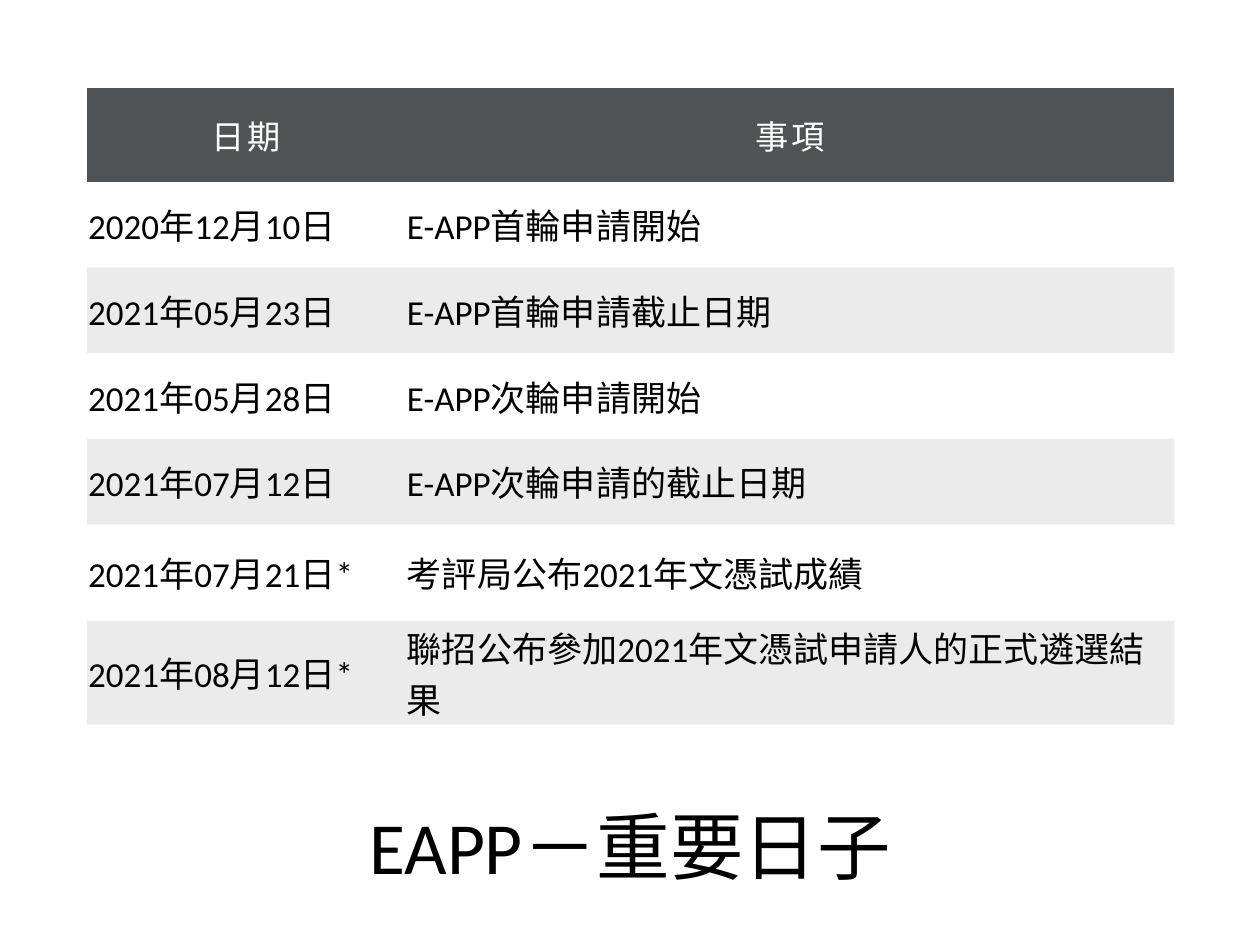
from lxml.etree import SubElement
from pptx import Presentation
from pptx.dml.color import RGBColor
from pptx.enum.text import MSO_ANCHOR, PP_ALIGN
from pptx.oxml.ns import qn
from pptx.util import Inches, Pt

# Content
TITLE = "EAPP－重要日子"
ROWS = [
    ("日期", "事項"),
    ("2020年12月10日", "E-APP首輪申請開始"),
    ("2021年05月23日", "E-APP首輪申請截止日期"),
    ("2021年05月28日", "E-APP次輪申請開始"),
    ("2021年07月12日", "E-APP次輪申請的截止日期"),
    ("2021年07月21日*", "考評局公布2021年文憑試成績"),
    ("2021年08月12日*", "聯招公布參加2021年文憑試申請人的正式遴選結果"),
]
LEFT, WIDTH = 0.69, 8.62
COLUMN_WIDTHS = (2.53, 6.1)
HEADER_HEIGHT, ROW_HEIGHT = 0.74, 0.68
NO_STYLE = "{2D5ABB26-0587-4C30-8999-92F81FD0307C}"


def set_fill(fill, color, alpha=None):
    fill.solid()
    fill.fore_color.rgb = RGBColor.from_string(color)
    if alpha is not None:
        color_element = fill._xPr.find(qn("a:solidFill"))[0]
        SubElement(color_element, qn("a:alpha"), val=str(alpha * 1000))


def write(frame, text, size, color="000000", align=PP_ALIGN.LEFT,
          line_spacing=None, letter_spacing=0):
    frame.word_wrap = True
    paragraph = frame.paragraphs[0]
    paragraph.alignment = align
    if line_spacing:
        paragraph.line_spacing = line_spacing
    run = paragraph.add_run()
    run.text = text
    run.font.name = "Calibri"
    run.font.size = Pt(size)
    run.font.bold = False
    run.font.color.rgb = RGBColor.from_string(color)
    if letter_spacing:
        run.font._element.set("spc", str(int(letter_spacing * 100)))


presentation = Presentation()
presentation.slide_width, presentation.slide_height = Inches(10), Inches(7.5)
slide = presentation.slides.add_slide(presentation.slide_layouts[5])

# Title below the table
title = slide.shapes.title
title.left, title.top = Inches(LEFT), Inches(6.09)
title.width, title.height = Inches(WIDTH), Inches(1.02)
frame = title.text_frame
frame.vertical_anchor = MSO_ANCHOR.BOTTOM
frame.margin_left = frame.margin_right = Inches(0.07)
frame.margin_top = frame.margin_bottom = Inches(0.04)
write(frame, TITLE, 42, align=PP_ALIGN.CENTER, line_spacing=0.9)

# Table of dates
table_height = HEADER_HEIGHT + ROW_HEIGHT * (len(ROWS) - 1)
table = slide.shapes.add_table(
    len(ROWS), len(COLUMN_WIDTHS), Inches(LEFT), Inches(0.7),
    Inches(WIDTH), Inches(table_height)).table
table.horz_banding = False
table.first_row = False
table._tbl.tblPr.find(qn("a:tableStyleId")).text = NO_STYLE
for column, width in zip(table.columns, COLUMN_WIDTHS):
    column.width = Inches(width)

for row_index, texts in enumerate(ROWS):
    header = row_index == 0
    table.rows[row_index].height = Inches(HEADER_HEIGHT if header else ROW_HEIGHT)
    margin = Inches(0.18 if header else 0.01)
    for column_index, text in enumerate(texts):
        cell = table.cell(row_index, column_index)
        cell.vertical_anchor = MSO_ANCHOR.MIDDLE
        cell.margin_left = cell.margin_right = margin
        cell.margin_top = cell.margin_bottom = margin
        if header:
            set_fill(cell.fill, "505356")
            write(cell.text_frame, text, 19, color="FFFFFF",
                  align=PP_ALIGN.CENTER, letter_spacing=1.5)
        else:
            if row_index % 2 == 0:
                set_fill(cell.fill, "000000", alpha=8)
            else:
                cell.fill.background()
            write(cell.text_frame, text, 20)

presentation.save("out.pptx")
